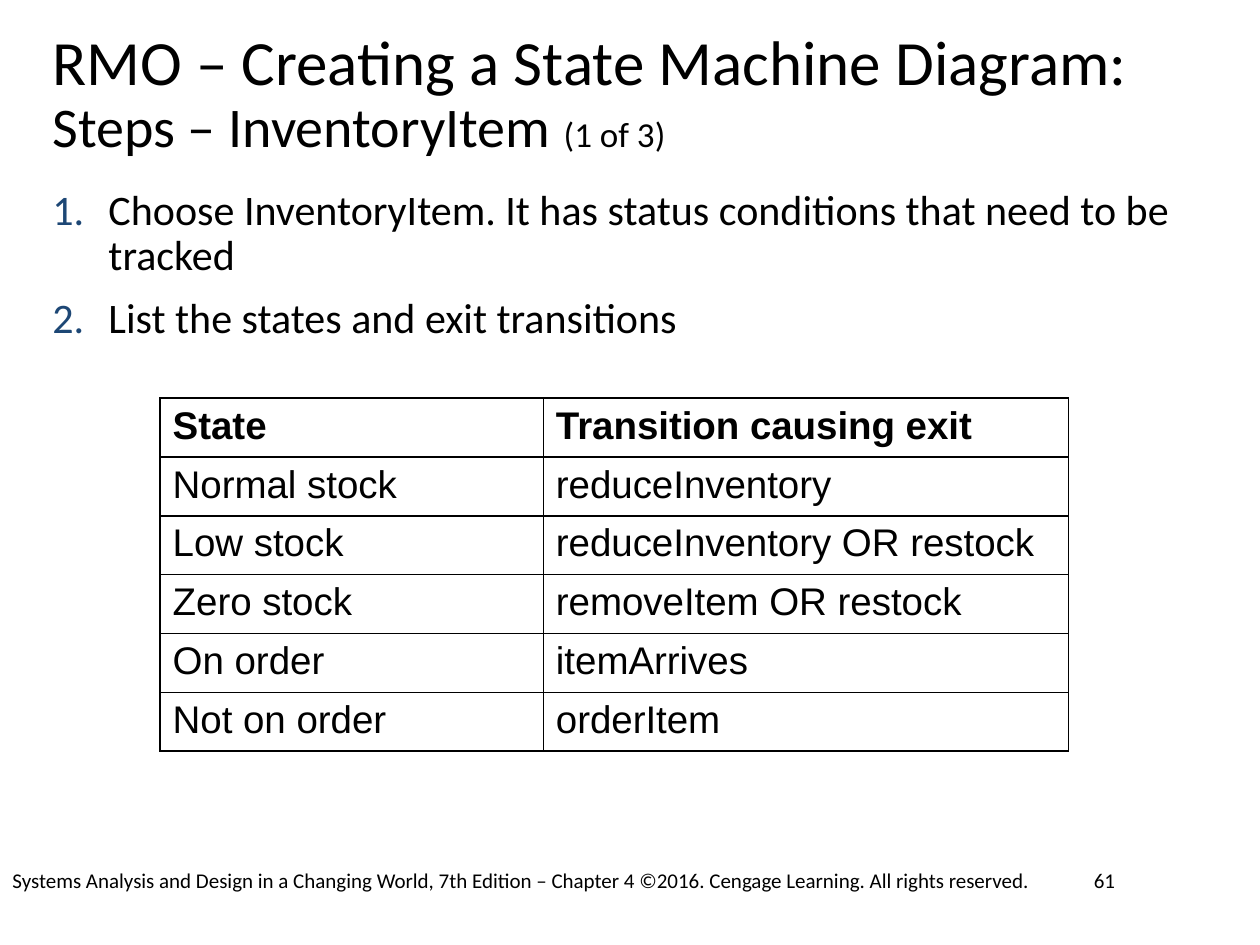
from lxml import etree
from pptx import Presentation
from pptx.dml.color import RGBColor
from pptx.oxml.ns import qn
from pptx.util import Pt

BLACK, NUMBER_BLUE = "000000", "1D4775"
BORDER_SIDES = ("a:lnL", "a:lnR", "a:lnT", "a:lnB")


def color(hex_code):
    return RGBColor.from_string(hex_code)


def add_solid_fill(parent, tag, hex_code):
    holder = etree.SubElement(parent, qn(tag)) if tag else parent
    return etree.SubElement(holder, qn("a:srgbClr"), val=hex_code)


class SlideWriter:
    """Holds the text style and the slide being written."""

    def __init__(self, slide, font="Calibri", table_font="Arial"):
        self.slide = slide
        self.font = font
        self.table_font = table_font

    def run(self, paragraph, text, size, font=None, bold=False):
        run = paragraph.add_run()
        run.text = text
        run.font.size = Pt(size)
        run.font.name = font or self.font
        run.font.bold = bold
        run.font.color.rgb = color(BLACK)

    def frame(self, left, top, width, height, inset=True):
        box = self.slide.shapes.add_textbox(Pt(left), Pt(top), Pt(width), Pt(height))
        frame = box.text_frame
        frame.word_wrap = True
        if not inset:
            frame.margin_left = frame.margin_right = Pt(0)
            frame.margin_top = frame.margin_bottom = Pt(0)
        return frame

    def title(self, lines, left, top, width, height):
        paragraph = self.frame(left, top, width, height, inset=False).paragraphs[0]
        paragraph.line_spacing = 0.9
        for index, line in enumerate(lines):
            if index:
                paragraph.add_line_break()
            for text, size in line:
                self.run(paragraph, text, size)

    def numbered_list(self, steps, left, top, width, height):
        frame = self.frame(left, top, width, height, inset=False)
        for index, step in enumerate(steps):
            paragraph = frame.add_paragraph() if index else frame.paragraphs[0]
            paragraph.line_spacing = 0.9
            paragraph.space_before = Pt(10 if index else 0)
            properties = paragraph._p.get_or_add_pPr()
            properties.set("marL", str(Pt(32)))
            properties.set("indent", str(-Pt(32)))
            add_solid_fill(properties, "a:buClr", NUMBER_BLUE)
            etree.SubElement(properties, qn("a:buFont"), typeface=self.font)
            etree.SubElement(properties, qn("a:buAutoNum"), type="arabicPeriod")
            self.run(paragraph, step, 24)

    def label(self, text, left, top, width, height):
        self.run(self.frame(left, top, width, height).paragraphs[0], text, 12)

    def border(self, cell):
        properties = cell._tc.get_or_add_tcPr()
        for side in BORDER_SIDES:
            line = etree.SubElement(properties, qn(side), w=str(Pt(1)))
            add_solid_fill(line, "a:solidFill", BLACK)

    def table(self, rows, left, top, widths, row_height):
        table = self.slide.shapes.add_table(
            len(rows), len(widths), Pt(left), Pt(top),
            Pt(sum(widths)), Pt(row_height * len(rows))).table
        table.first_row = table.horz_banding = False
        for column, width in zip(table.columns, widths):
            column.width = Pt(width)
        for row_index, row in enumerate(rows):
            for column_index, text in enumerate(row):
                cell = table.cell(row_index, column_index)
                self.border(cell)
                cell.fill.background()
                self.run(cell.text_frame.paragraphs[0], text, 22,
                         self.table_font, bold=row_index == 0)


def main():
    deck = Presentation()
    deck.slide_width, deck.slide_height = Pt(720), Pt(540)
    writer = SlideWriter(deck.slides.add_slide(deck.slide_layouts[6]))
    writer.title([
        [("RMO – Creating a State Machine Diagram:", 36)],
        [("Steps – InventoryItem ", 32), ("(1 of 3)", 20)],
    ], 30, 18, 660, 74)
    writer.numbered_list([
        "Choose InventoryItem. It has status conditions that need to be tracked",
        "List the states and exit transitions",
    ], 30, 108, 660, 88.5)
    writer.table([
        ("State", "Transition causing exit"),
        ("Normal stock", "reduceInventory"),
        ("Low stock", "reduceInventory OR restock"),
        ("Zero stock", "removeItem OR restock"),
        ("On order", "itemArrives"),
        ("Not on order", "orderItem"),
    ], 91.5, 227.5, (219, 300), 29.5)
    writer.label("61", 618, 492, 66, 36)
    writer.label("Systems Analysis and Design in a Changing World, 7th Edition – Chapter 4 "
                 "©2016. Cengage Learning. All rights reserved.", 0, 492, 600, 36)
    deck.save("out.pptx")


if __name__ == "__main__":
    main()
